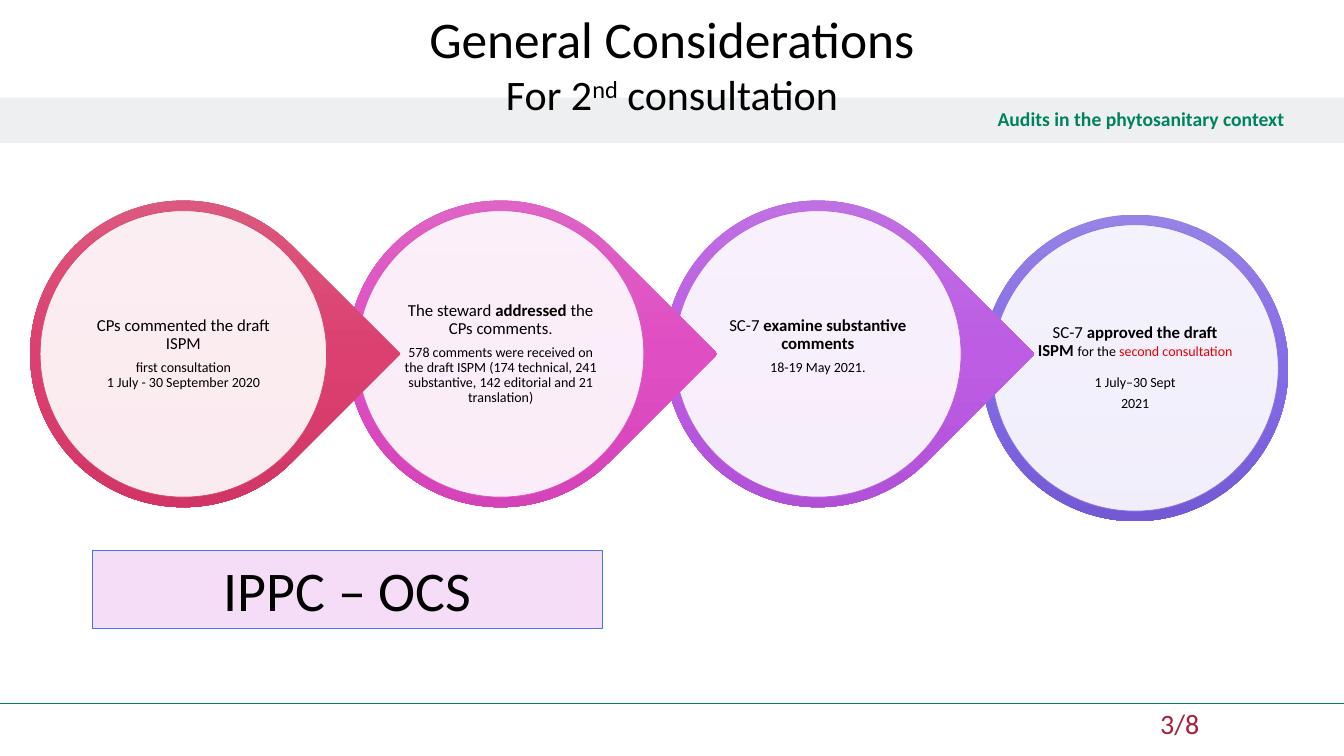
import pptx
import pptx.dml.color
import pptx.enum.shapes
import pptx.enum.text
import pptx.oxml
import pptx.oxml.ns
import pptx.util

Pt = pptx.util.Pt
qn = pptx.oxml.ns.qn
Form = pptx.enum.shapes.MSO_SHAPE
Side = pptx.enum.text.PP_ALIGN
Mid = pptx.enum.text.MSO_ANCHOR

THEME = {
    "font": "Calibri",
    "black": "000000", "white": "FFFFFF", "green": "00825F", "band": "D8D9DC",
    "page": "A81E3B", "alert": "EA0000", "box": "F4D5F5", "edge": "4775E7",
    "rings": [
        ("DB6384", "DC4070", "CC3161", "D54773"),
        ("DE6DC6", "E04EC3", "CE3EB2", "D955BF"),
        ("C178E2", "BC5DE3", "AA4BD1", "B963DD"),
        ("9783E6", "866BE7", "7359D4", "8971E1"),
    ],
    "title": 36.7, "sub": 30, "label": 40, "num": 20, "tag": 14,
    "head": 12, "body": 10,
}
BODY = {"size": THEME["body"]}
BOLD = {"bold": True}
RED = {"size": THEME["body"], "color": THEME["alert"]}

STEPS = [
    ([(0, [("CPs commented the draft ISPM", {})]),
      (5, [("first consultation", BODY)]),
      (0, [("1 July - 30 September 2020", BODY)])], 0, 0),
    ([(0, [("The steward ", {}), ("addressed", BOLD), (" the CPs comments", {}),
           (".", {"size": 11})]),
      (5, [("578 comments were received on the draft ISPM (174 technical, "
            "241 substantive, 142 editorial and 21 translation)", BODY)])], 0, 0),
    ([(0, [("SC-7 ", {}), ("examine substantive comments", BOLD)]),
      (5, [("18-19 May 2021.", BODY)])], 0, 11),
    ([(0, [("SC-7 ", {}), ("approved the draft ISPM ", BOLD), ("for the ", BODY),
           ("second consultation", RED)]),
      (11, [("1 July–30 Sept", BODY)]),
      (4, [("2021", BODY)])], 10, 0),
]


def color(code):
    return pptx.dml.color.RGBColor.from_string(code)


def write(frame, text, size=12, color_code=THEME["black"], bold=False,
          align=Side.CENTER, anchor=Mid.MIDDLE, space=1.0,
          inset=(7.2, 3.6, 7.2, 3.6)):
    frame.word_wrap = True
    frame.vertical_anchor = anchor
    (frame.margin_left, frame.margin_top,
     frame.margin_right, frame.margin_bottom) = map(Pt, inset)
    rows = [(0, [(text, {})])] if isinstance(text, str) else text
    for i, (gap, runs) in enumerate(rows):
        para = frame.add_paragraph() if i else frame.paragraphs[0]
        para.alignment = align
        para.line_spacing = space
        if gap:
            para.space_before = Pt(gap)
        for words, style in runs:
            run = para.add_run()
            run.text = words
            run.font.name = THEME["font"]
            run.font.size = Pt(style.get("size", size))
            run.font.bold = style.get("bold", bold)
            run.font.color.rgb = color(style.get("color", color_code))
            if "raise" in style:
                run.font._element.set("baseline", str(style["raise"] * 1000))


class Deck:
    """Draw styled elements on the current slide."""

    def __init__(self, wide, high):
        self.show = pptx.Presentation()
        self.show.slide_width, self.show.slide_height = Pt(wide), Pt(high)
        self.slide = self.show.slides.add_slide(self.show.slide_layouts[6])

    def shape(self, form, area, fill=None, alpha=100, edge=None):
        item = self.slide.shapes.add_shape(form, *map(Pt, area))
        item.shadow.inherit = False
        if fill:
            item.fill.solid()
            item.fill.fore_color.rgb = color(fill)
            tint = item._element.spPr.find(".//" + qn("a:srgbClr"))
            mark = tint.makeelement(qn("a:alpha"), {"val": str(alpha * 1000)})
            tint.append(mark)
        if edge:
            item.line.color.rgb = color(edge)
            item.line.width = Pt(0.5)
        else:
            item.line.fill.background()
        return item

    def ring(self, form, area, tones, turn):
        item = self.shape(form, area)
        item.rotation = turn
        stops = "".join(
            f'<a:gs pos="{i * 50000}"><a:srgbClr val="{tone}"/></a:gs>'
            for i, tone in enumerate(tones))
        fill = pptx.oxml.parse_xml(
            f'<a:gradFill {pptx.oxml.ns.nsdecls("a")} rotWithShape="0">'
            f'<a:gsLst>{stops}</a:gsLst><a:lin ang="5400000" scaled="0"/></a:gradFill>')
        item._element.spPr.find(qn("a:prstGeom")).addnext(fill)

    def text(self, area, text, **style):
        item = self.slide.shapes.add_textbox(*map(Pt, area))
        write(item.text_frame, text, **style)

    def line(self, x1, y1, x2, y2, tone):
        kind = pptx.enum.shapes.MSO_CONNECTOR.STRAIGHT
        item = self.slide.shapes.add_connector(kind, *map(Pt, (x1, y1, x2, y2)))
        item.line.color.rgb = color(tone)
        item.line.width = Pt(1)
        flat = item._element.spPr.makeelement(qn("a:effectLst"), {})
        item._element.spPr.append(flat)

    def step(self, x, y, form, turn, tones, text, foot):
        def around(side):
            return x - side / 2, y - side / 2, side, side
        self.ring(form, around(219), tones[:3], turn)
        self.shape(Form.OVAL, around(204.6), THEME["white"], 90, tones[3])
        self.text(around(146), text, size=THEME["head"], space=0.9,
                  inset=(1.4, 1.4, 1.4, 1.4 + foot))


def main():
    deck = Deck(960, 540)
    deck.line(0, 502.5, 960, 502.5, THEME["green"])
    band = deck.shape(Form.RECTANGLE, (0, 69.8, 960, 32.4), THEME["band"], 42)
    write(band.text_frame, "Audits in the phytosanitary context",
          size=THEME["tag"], color_code=THEME["green"], bold=True,
          align=Side.RIGHT, space=0.9, inset=(42.5, 3.6, 42.5, 3.6))
    deck.text((786.2, 504.7, 174, 28), "3/8", size=THEME["num"],
              color_code=THEME["page"], align=Side.LEFT, anchor=Mid.TOP,
              inset=(42.5, 0, 28, 3.6))
    deck.text((0, 0, 960, 90), [
        (0, [("General Considerations", {"size": THEME["title"]})]),
        (0, [("For 2", {}), ("nd", {"raise": 30}), (" consultation", {})]),
    ], size=THEME["sub"])
    last = len(STEPS) - 1
    for i in range(last, -1, -1):
        text, drop, foot = STEPS[i]
        form, turn = (Form.OVAL, 0) if i == last else (Form.TEAR, 45)
        deck.step(131 + 226.6 * i, 252.8 + drop, form, turn,
                  THEME["rings"][i], text, foot)
    box = deck.shape(Form.RECTANGLE, (66, 393, 364.4, 55.6), THEME["box"], 80,
                     THEME["edge"])
    write(box.text_frame, "IPPC – OCS", size=THEME["label"], anchor=Mid.TOP)
    deck.show.save("out.pptx")


if __name__ == "__main__":
    main()
